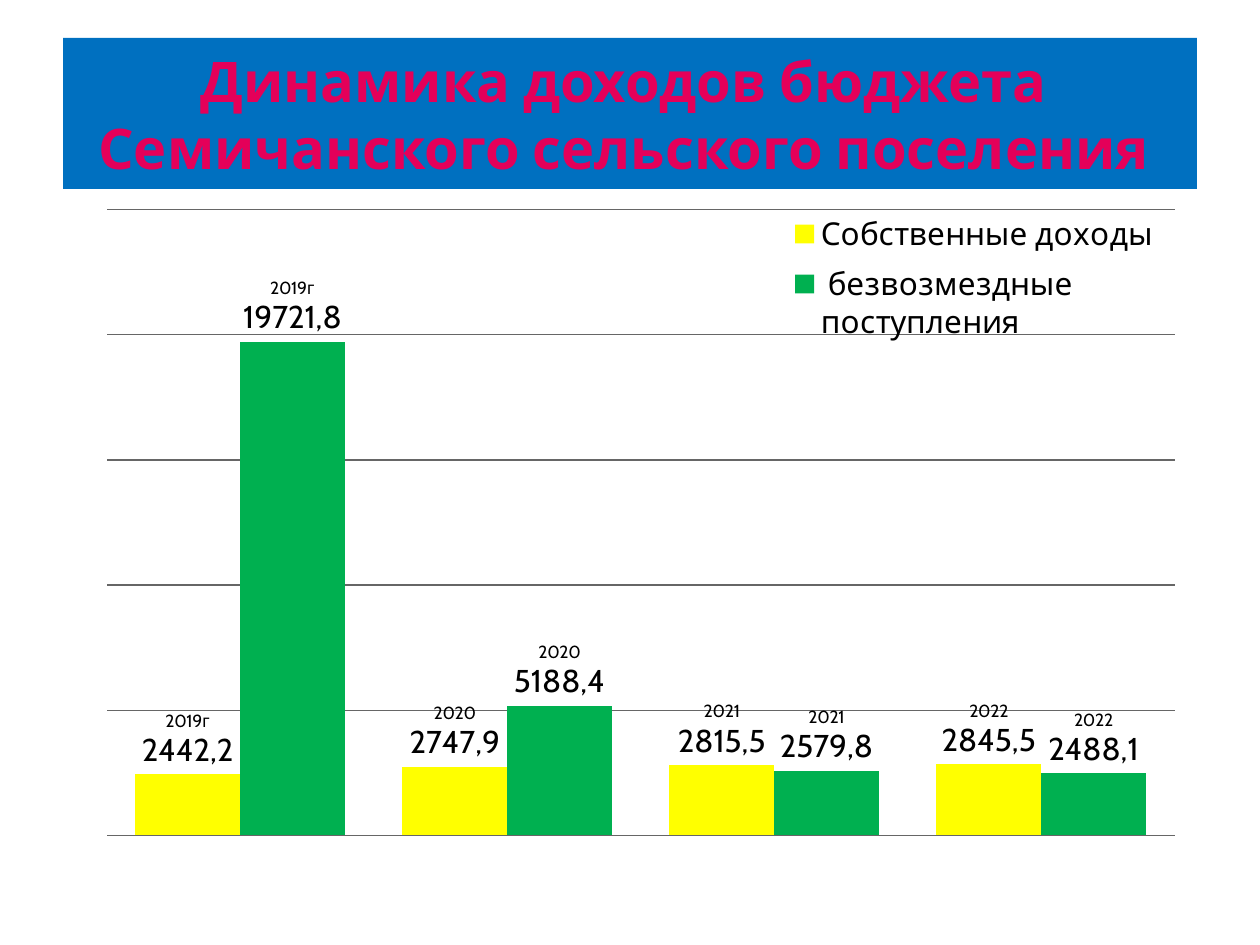
from lxml.etree import SubElement
from pptx import Presentation
from pptx.chart.data import CategoryChartData
from pptx.dml.color import RGBColor
from pptx.enum.chart import XL_CHART_TYPE, XL_LABEL_POSITION, XL_LEGEND_POSITION
from pptx.enum.text import MSO_ANCHOR, MSO_AUTO_SIZE, PP_ALIGN
from pptx.oxml.ns import qn
from pptx.util import Inches, Pt

FONT = "Cabin"
COLORS = {
    "banner": "0070C0",
    "title": "E40059",
    "text": "000000",
    "grid": "666666",
    "own": "FFFF00",
    "grants": "00B050",
}
YEARS = ["2019г", "2020", "2021", "2022"]
INCOME = [
    ("Собственные доходы", "own", [2442.2, 2747.9, 2815.5, 2845.5]),
    (" безвозмездные поступления ", "grants", [19721.8, 5188.4, 2579.8, 2488.1]),
]


def color(key):
    return RGBColor.from_string(COLORS[key])


def set_font(font, size, color_key="text", bold=False):
    font.name, font.size, font.bold = FONT, Pt(size), bold
    font.color.rgb = color(color_key)


def write_text(paragraph, text, align=PP_ALIGN.CENTER, **font_format):
    paragraph.text = text
    paragraph.alignment = align
    for run in paragraph.runs:
        set_font(run.font, **font_format)


def place(shape, slide_size, left, top, width, height):
    """Place a shape by shares of the slide's size."""
    slide_width, slide_height = slide_size
    shape.left, shape.width = int(left * slide_width), int(width * slide_width)
    shape.top, shape.height = int(top * slide_height), int(height * slide_height)


def set_layout(element, shares, inner=False):
    """Fix a chart part by shares of the chart's size."""
    layout = element.find(qn("c:layout"))
    if layout is None:
        layout = SubElement(element, qn("c:layout"))
        anchor = element.find(qn("c:legendPos"))
        if anchor is not None:
            anchor.addnext(layout)
        else:
            element.insert(0, layout)
    for child in list(layout):
        layout.remove(child)
    manual = SubElement(layout, qn("c:manualLayout"))
    settings = [("layoutTarget", "inner")] if inner else []
    settings += [("xMode", "edge"), ("yMode", "edge")]
    settings += zip("xywh", shares)
    for tag, value in settings:
        SubElement(manual, qn(f"c:{tag}")).set("val", str(value))


def add_banner(slide, slide_size):
    banner = slide.shapes.title
    place(banner, slide_size, 0.05, 0.04, 0.9, 0.16)
    banner.fill.solid()
    banner.fill.fore_color.rgb = color("banner")
    frame = banner.text_frame
    frame.word_wrap = True
    frame.auto_size = MSO_AUTO_SIZE.NONE
    frame.vertical_anchor = MSO_ANCHOR.MIDDLE
    write_text(
        frame.paragraphs[0],
        "Динамика доходов бюджета \vСемичанского сельского поселения ",
        size=32, color_key="title", bold=True,
    )


def label_bars(series, amounts):
    labels = series.data_labels
    labels.show_value = True
    labels.position = XL_LABEL_POSITION.OUTSIDE_END
    set_font(labels.font, 18)
    for index, (year, amount) in enumerate(zip(YEARS, amounts)):
        label = series.points[index].data_label
        frame = label.text_frame
        write_text(frame.paragraphs[0], year, size=10)
        write_text(frame.add_paragraph(), str(amount).replace(".", ","), size=18)
        label.position = XL_LABEL_POSITION.OUTSIDE_END


def add_income_chart(slide, slide_size):
    income = CategoryChartData()
    income.categories = ["1", "2", "3", "4"]
    for name, _, amounts in INCOME:
        income.add_series(name, amounts)
    frame = slide.shapes.add_chart(
        XL_CHART_TYPE.COLUMN_CLUSTERED, 0, 0, *slide_size, income)
    place(frame, slide_size, 0.067, 0.208, 0.883, 0.69)
    chart = frame.chart
    chart.has_title = False
    set_font(chart.font, 18)

    # Axes and grid
    chart.category_axis.visible = False
    scale = chart.value_axis
    scale.visible = False
    scale.minimum_scale, scale.maximum_scale, scale.major_unit = 0, 25000, 5000
    scale.has_major_gridlines = True
    grid_line = scale.major_gridlines.format.line
    grid_line.width = Pt(0.75)
    grid_line.color.rgb = color("grid")

    # Bars
    plot = chart.plots[0]
    plot.gap_width, plot.overlap = 55, 0
    plot.vary_by_categories = False
    for series, (_, color_key, amounts) in zip(plot.series, INCOME):
        series.format.fill.solid()
        series.format.fill.fore_color.rgb = color(color_key)
        label_bars(series, amounts)

    # Legend over the plot
    chart.has_legend = True
    legend = chart.legend
    legend.position = XL_LEGEND_POSITION.RIGHT
    legend.include_in_layout = True
    set_font(legend.font, 18)
    set_layout(legend._element, (0.63, 0.01, 0.34, 0.23))
    plot_area = chart._chartSpace.chart.plotArea
    set_layout(plot_area, (0.02, 0.02, 0.96, 0.96), inner=True)


def main():
    deck = Presentation()
    deck.slide_width, deck.slide_height = slide_size = Inches(10), Inches(7.5)
    slide = deck.slides.add_slide(deck.slide_layouts[5])
    add_banner(slide, slide_size)
    add_income_chart(slide, slide_size)
    deck.save("out.pptx")


if __name__ == "__main__":
    main()
